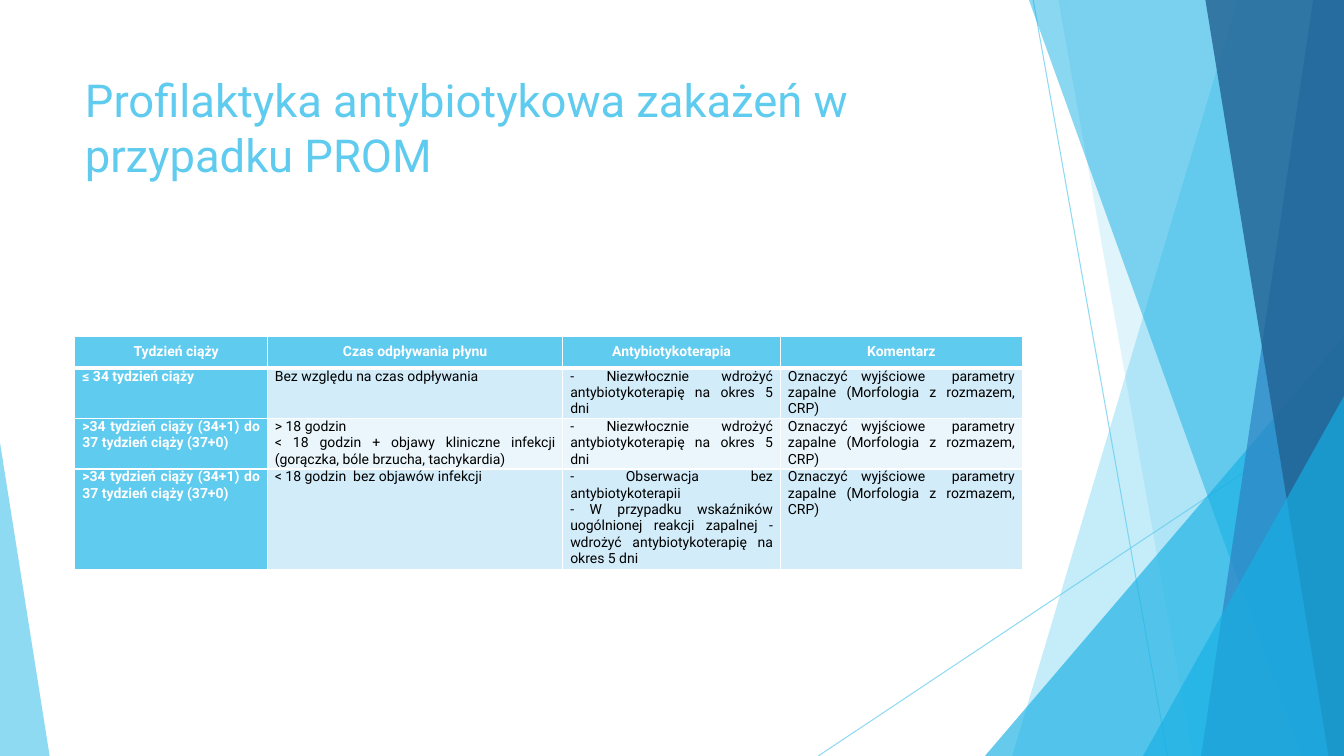
from lxml import etree
from pptx import Presentation
from pptx.dml.color import RGBColor
from pptx.enum.shapes import MSO_CONNECTOR, MSO_SHAPE
from pptx.enum.text import MSO_ANCHOR, PP_ALIGN
from pptx.oxml.ns import qn
from pptx.util import Pt

TRIANGLE = MSO_SHAPE.ISOSCELES_TRIANGLE
STRAIGHT = MSO_CONNECTOR.STRAIGHT
TOP, MIDDLE = MSO_ANCHOR.TOP, MSO_ANCHOR.MIDDLE
CENTER, JUSTIFY = PP_ALIGN.CENTER, PP_ALIGN.JUSTIFY

FONT = "Roboto"
WIDTH, HEIGHT = 960, 540
SKY, AZURE, BLUE, NAVY = "5FCBEF", "17B0E4", "2E83C3", "226292"
WHITE, BLACK = "FFFFFF", "000000"
ROW_FILLS = ["D2ECF9", "EAF6FC"]

COLUMN_WIDTHS = [137.5, 211, 155.5, 172.8]
ROW_HEIGHTS = [23, 36, 36, 72]
START_THERAPY = "- Niezwłocznie wdrożyć antybiotykoterapię na okres 5 dni"
COMMENT = "Oznaczyć wyjściowe  parametry zapalne (Morfologia z rozmazem, CRP)"
LATE_WEEKS = ">34 tydzień ciąży (34+1) do 37 tydzień ciąży (37+0)"
ROWS = [
    ["Tydzień ciąży", "Czas odpływania płynu", "Antybiotykoterapia", "Komentarz"],
    ["≤ 34 tydzień ciąży", "Bez względu na czas odpływania", START_THERAPY, COMMENT],
    [LATE_WEEKS,
     "> 18 godzin\n< 18 godzin + objawy kliniczne infekcji "
     "(gorączka, bóle brzucha, tachykardia)", START_THERAPY, COMMENT],
    [LATE_WEEKS, "< 18 godzin  bez objawów infekcji",
     "- Obserwacja bez antybiotykoterapii\n- W przypadku wskaźników uogólnionej "
     "reakcji zapalnej - wdrożyć antybiotykoterapię na okres 5 dni", COMMENT],
]


def rgb(value):
    return RGBColor.from_string(value)


def set_alpha(element, percent):
    """Make every plain colour inside the element partly transparent."""
    for color in element.iter(qn("a:srgbClr")):
        etree.SubElement(color, qn("a:alpha"), val=str(percent * 1000))


def paint(shape, color, opacity):
    shape.shadow.inherit = False
    shape.line.fill.background()
    shape.fill.solid()
    shape.fill.fore_color.rgb = rgb(color)
    set_alpha(shape.fill._xPr, opacity)


def add_ray(page, start, end):
    ray = page.shapes.add_connector(STRAIGHT, *map(Pt, start + end))
    ray.line.color.rgb = rgb(SKY)
    ray.line.width = Pt(0.75)
    properties = ray._element.spPr
    set_alpha(properties, 70)
    etree.SubElement(properties, qn("a:effectLst"))


def add_band(page, top_left, bottom_left, color, opacity):
    """Fill from a slanted left edge to the right side of the page."""
    builder = page.shapes.build_freeform(Pt(top_left), 0, scale=1.0)
    corners = [(WIDTH, 0), (WIDTH, HEIGHT), (bottom_left, HEIGHT)]
    builder.add_line_segments([(Pt(x), Pt(y)) for x, y in corners], close=True)
    paint(builder.convert_to_shape(), color, opacity)


def add_corner(page, left, top, right, apex, color, opacity):
    """Stand a right triangle on the bottom edge of the page."""
    corner = page.shapes.add_shape(
        TRIANGLE, Pt(left), Pt(top), Pt(right - left), Pt(HEIGHT - top))
    corner.adjustments[0] = apex
    paint(corner, color, opacity)


def add_backdrop(page):
    add_ray(page, (738, 0), (834, HEIGHT))
    add_ray(page, (WIDTH, 290), (584.5, HEIGHT))
    add_band(page, 884, 723, SKY, 36)
    add_band(page, 756, 852, SKY, 20)
    add_corner(page, 703.5, 240, WIDTH, 1, AZURE, 66)
    add_band(page, 735, 929.5, AZURE, 50)
    add_band(page, 938, 858, BLUE, 70)
    add_band(page, 861, 949, NAVY, 80)
    add_corner(page, 816.5, 283, WIDTH, 1, AZURE, 66)
    add_corner(page, 0, 316, 35.5, 0, SKY, 70)


def style_text(frame, size, color, bold, align):
    for para in frame.paragraphs:
        para.alignment = align
        for span in para.runs:
            span.font.name = FONT
            span.font.size = Pt(size)
            span.font.bold = bold
            span.font.color.rgb = rgb(color)


def add_title(page, left, top, width, height):
    title = page.shapes.title
    title.left, title.top = Pt(left), Pt(top)
    title.width, title.height = Pt(width), Pt(height)
    frame = title.text_frame
    frame.text = "Profilaktyka antybiotykowa zakażeń w przypadku PROM"
    frame.word_wrap = True
    frame.vertical_anchor = TOP
    style_text(frame, 32.4, SKY, False, PP_ALIGN.LEFT)


def add_borders(cell, top, bottom):
    properties = cell._tc.get_or_add_tcPr()
    for side, width in {"L": 1, "R": 1, "T": top, "B": bottom}.items():
        border = etree.SubElement(properties, qn(f"a:ln{side}"), w=str(Pt(width)))
        fill = etree.SubElement(border, qn("a:solidFill"))
        etree.SubElement(fill, qn("a:srgbClr"), val=WHITE)


def fill_cell(cell, text, row, column):
    header = row == 0
    accent = header or column == 0
    add_borders(cell, 3 if row == 1 else 1, 3 if header else 1)
    cell.fill.solid()
    cell.fill.fore_color.rgb = rgb(SKY if accent else ROW_FILLS[(row - 1) % 2])
    cell.margin_left = cell.margin_right = Pt(5.4)
    cell.margin_top = cell.margin_bottom = 0
    cell.vertical_anchor = MIDDLE if header else TOP
    cell.text_frame.text = text
    style_text(cell.text_frame, 10, WHITE if accent else BLACK, accent,
               CENTER if header else JUSTIFY)


def add_therapy_table(page, left, top):
    table = page.shapes.add_table(
        len(ROWS), len(COLUMN_WIDTHS), Pt(left), Pt(top),
        Pt(sum(COLUMN_WIDTHS)), Pt(sum(ROW_HEIGHTS))).table
    table.horz_banding = False
    for column, width in zip(table.columns, COLUMN_WIDTHS):
        column.width = Pt(width)
    for row, height in zip(table.rows, ROW_HEIGHTS):
        row.height = Pt(height)
    for row, texts in enumerate(ROWS):
        for column, text in enumerate(texts):
            fill_cell(table.cell(row, column), text, row, column)
    first_para = table.cell(0, 0).text_frame.paragraphs[0]
    first_para._p.get_or_add_pPr().set("marL", str(Pt(7.2)))


def main():
    deck = Presentation()
    deck.slide_width, deck.slide_height = Pt(WIDTH), Pt(HEIGHT)
    page = deck.slides.add_slide(deck.slide_layouts[5])
    add_backdrop(page)
    add_title(page, 53.5, 48, 676.8, 104)
    add_therapy_table(page, 53.5, 240)
    deck.save("out.pptx")


if __name__ == "__main__":
    main()
